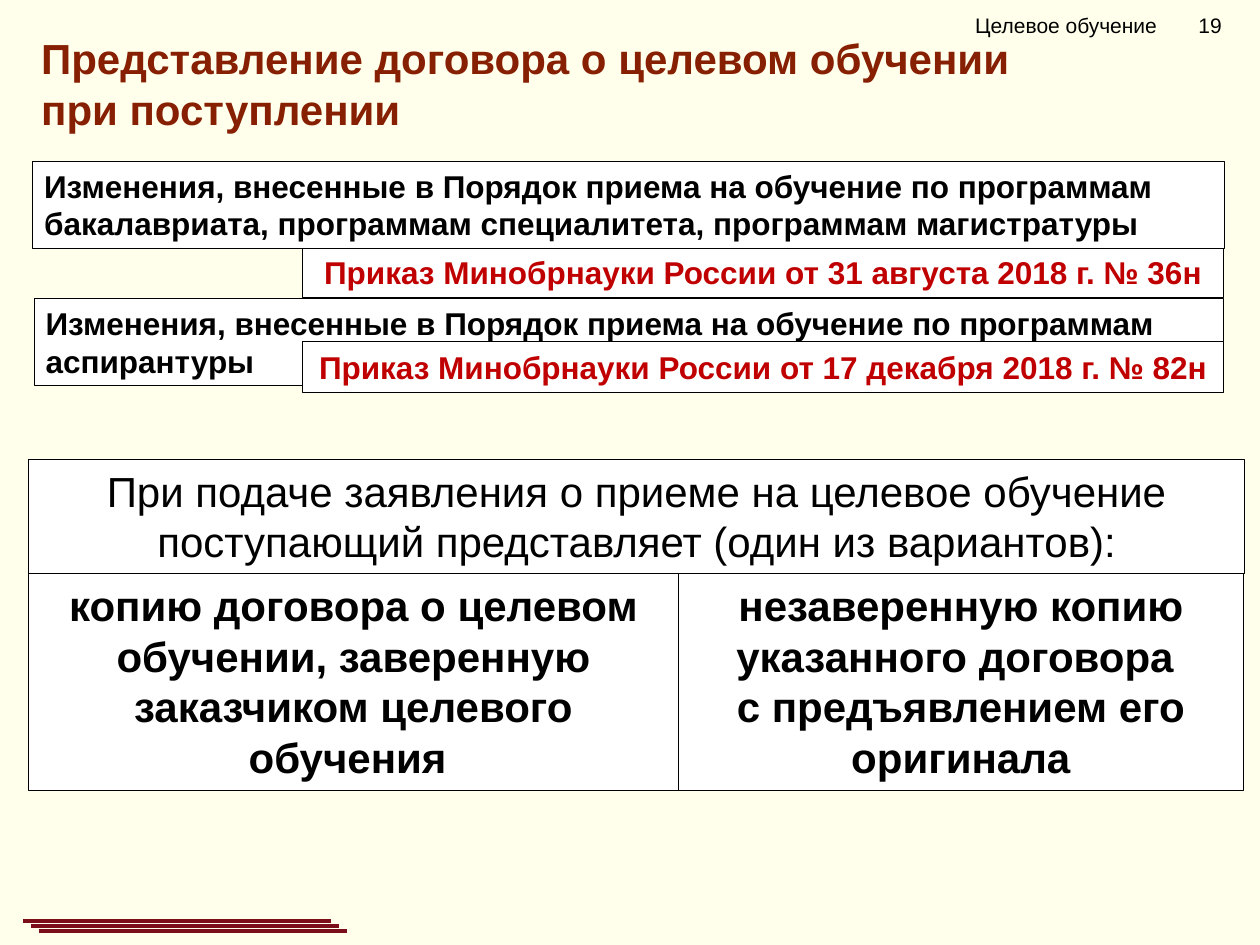
from lxml.etree import SubElement
from pptx import Presentation
from pptx.dml.color import RGBColor
from pptx.enum.shapes import MSO_CONNECTOR, MSO_SHAPE
from pptx.enum.text import MSO_ANCHOR, MSO_AUTO_SIZE, PP_ALIGN
from pptx.oxml.ns import qn
from pptx.util import Cm, Pt

BLACK, WHITE, CREAM = "000000", "FFFFFF", "FFFFEB"
BROWN, RED, MAROON = "871F03", "C00000", "7B0F19"


def color(hex_code):
    return RGBColor.from_string(hex_code)


def write(frame, text, size=24, ink=BLACK, bold=False, align=PP_ALIGN.CENTER,
          anchor=MSO_ANCHOR.TOP, inset=(0.25, 0.13)):
    """Fill a text frame; each line of text becomes a paragraph."""
    frame.word_wrap = True
    frame.vertical_anchor = anchor
    frame.margin_left = frame.margin_right = Cm(inset[0])
    frame.margin_top = frame.margin_bottom = Cm(inset[1])
    frame.text = text
    for paragraph in frame.paragraphs:
        paragraph.alignment = align
        font = paragraph.font
        for run in paragraph.runs:
            font = run.font
            font.name, font.size, font.bold = "Arial", Pt(size), bold
            font.color.rgb = color(ink)


class SlideBuilder:
    def __init__(self, slide):
        self.slide = slide
        background = slide.background.fill
        background.solid()
        background.fore_color.rgb = color(CREAM)

    def panel(self, left, top, width, height, text, **style):
        box = self.slide.shapes.add_shape(
            MSO_SHAPE.RECTANGLE, Cm(left), Cm(top), Cm(width), Cm(height))
        box.shadow.inherit = False
        box.fill.solid()
        box.fill.fore_color.rgb = color(WHITE)
        box.line.color.rgb = color(BLACK)
        box.line.width = Pt(0.25)
        write(box.text_frame, text, **style)
        box.text_frame.auto_size = MSO_AUTO_SIZE.SHAPE_TO_FIT_TEXT

    def label(self, left, top, width, height, text, tab=None, **style):
        box = self.slide.shapes.add_textbox(
            Cm(left), Cm(top), Cm(width), Cm(height))
        write(box.text_frame, text, **style)
        if tab:
            properties = box.text_frame.paragraphs[0]._p.get_or_add_pPr()
            stops = SubElement(properties, qn("a:tabLst"))
            SubElement(stops, qn("a:tab"), pos=str(Cm(tab)), algn="l")

    def rule(self, left, top, width):
        stroke = self.slide.shapes.add_connector(
            MSO_CONNECTOR.STRAIGHT, Cm(left), Cm(top), Cm(left + width), Cm(top))
        stroke.line.color.rgb = color(MAROON)
        stroke.line.width = Pt(2.25)
        SubElement(stroke._element.spPr, qn("a:effectLst"))


def main():
    deck = Presentation()
    deck.slide_width, deck.slide_height = Cm(25.4), Cm(19.05)
    page = SlideBuilder(deck.slides.add_slide(deck.slide_layouts[6]))

    # Two ways to present the contract
    options_left, options_top, split = 0.58, 11.56, 13.67
    page.panel(options_left, 9.25, 24.51, 2.31,
               "При подаче заявления о приеме на целевое обучение "
               "поступающий представляет (один из вариантов):")
    page.panel(options_left, options_top, split - options_left, 4.37,
               "копию договора о целевом обучении, заверенную "
               "заказчиком целевого обучения ", bold=True)
    page.panel(split, options_top, 11.4, 4.37,
               "незаверенную копию указанного договора \n"
               "с предъявлением его оригинала", bold=True)

    # Running header and title
    page.label(18.9, 0, 6.5, 1.02, "Целевое обучение\t19", tab=4.5, size=12,
               align=PP_ALIGN.LEFT, anchor=MSO_ANCHOR.MIDDLE, inset=(0.76, 0.13))
    page.label(options_left, 0.53, 23.9, 1.19,
               "Представление договора о целевом обучении\nпри поступлении",
               ink=BROWN, bold=True, align=PP_ALIGN.LEFT)

    # Amendments and the orders that made them
    order = dict(size=18, ink=RED, bold=True)
    amendment = dict(size=18, bold=True, align=PP_ALIGN.LEFT, inset=(0.23, 0.11))
    change = "Изменения, внесенные в Порядок приема на обучение по программам "
    page.panel(6.1, 4.98, 18.57, 1.02,
               "Приказ Минобрнауки России от 31 августа 2018 г. № 36н", **order)
    page.panel(0.66, 3.25, 24.03, 1.75,
               change + "бакалавриата, программам специалитета, "
               "программам магистратуры", **amendment)
    page.panel(0.69, 6.02, 23.98, 1.75, change + "аспирантуры", **amendment)
    page.panel(6.1, 6.88, 18.57, 1.02,
               "Приказ Минобрнауки России от 17 декабря 2018 г. № 82н", **order)

    # Stepped rules at the foot
    for step in range(3):
        page.rule(0.46 + 0.16 * step, 18.57 + 0.1 * step, 6.21)

    deck.save("out.pptx")


if __name__ == "__main__":
    main()
